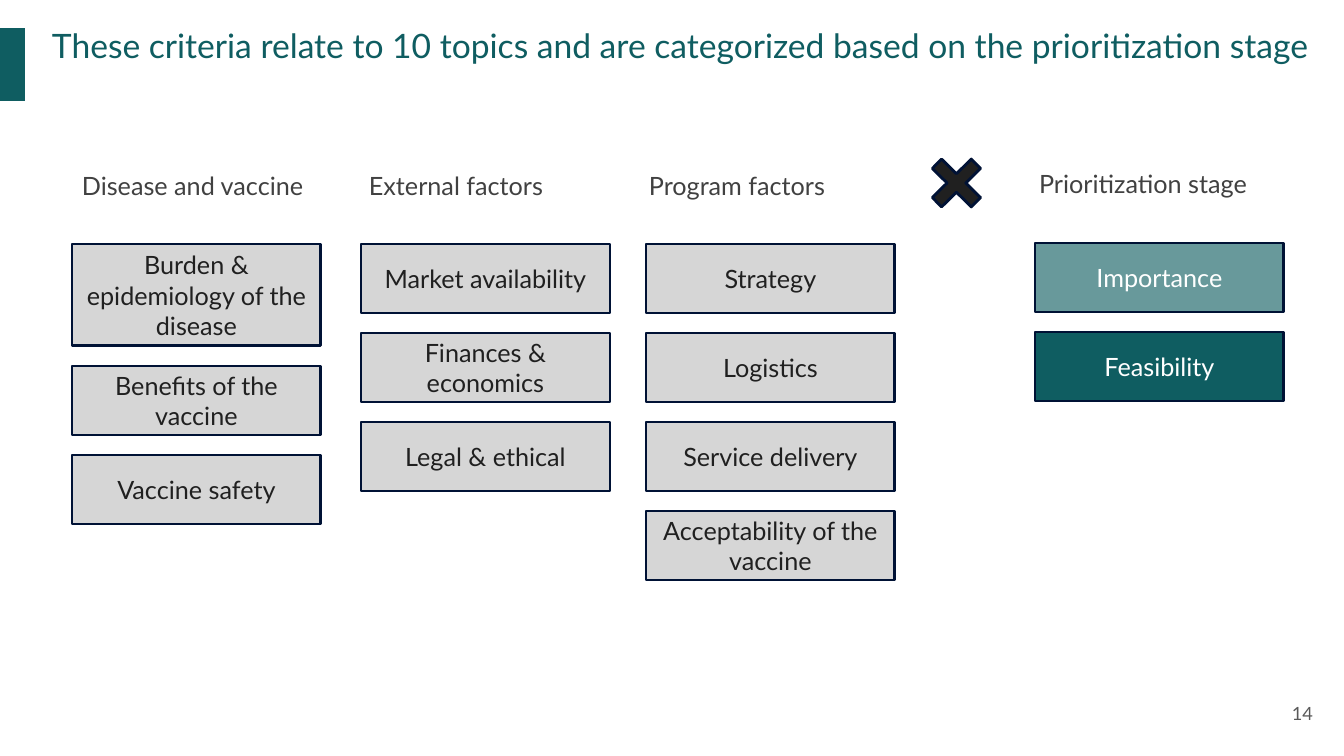
from pptx import Presentation
from pptx.dml.color import RGBColor
from pptx.enum.shapes import MSO_SHAPE
from pptx.enum.text import MSO_ANCHOR, MSO_AUTO_SIZE, PP_ALIGN
from pptx.util import Emu, Pt

FONT = "Lato"
TEAL = RGBColor(0x0F, 0x5D, 0x61)
LIGHT_TEAL = RGBColor(0x68, 0x99, 0x9B)
NAVY = RGBColor(0x00, 0x12, 0x35)
LIGHT_GREY = RGBColor(0xD6, 0xD6, 0xD6)
HEADING_GREY = RGBColor(0x41, 0x41, 0x41)
NUMBER_GREY = RGBColor(0x59, 0x59, 0x59)
INK = RGBColor(0x20, 0x20, 0x20)
WHITE = RGBColor(0xFF, 0xFF, 0xFF)

PIXELS_PER_INCH = 100.8
SLIDE_WIDTH, SLIDE_HEIGHT = 1344, 756
CARD_WIDTH, CARD_HEIGHT, CARD_GAP = 249, 69, 20
TALL_CARD_HEIGHT = 102

# Each topic column: card left, heading left, heading, topics with heights
TOPIC_COLUMNS = [
    (72, 72, "Disease and vaccine", [
        ("Burden & epidemiology of the disease", TALL_CARD_HEIGHT),
        ("Benefits of the vaccine", CARD_HEIGHT),
        ("Vaccine safety", CARD_HEIGHT)]),
    (361, 359, "External factors", [
        ("Market availability", CARD_HEIGHT),
        ("Finances & economics", CARD_HEIGHT),
        ("Legal & ethical", CARD_HEIGHT)]),
    (646, 639, "Program factors", [
        ("Strategy", CARD_HEIGHT),
        ("Logistics", CARD_HEIGHT),
        ("Service delivery", CARD_HEIGHT),
        ("Acceptability of the vaccine", CARD_HEIGHT)]),
]
STAGES = [("Importance", LIGHT_TEAL), ("Feasibility", TEAL)]


def px(length):
    return Emu(round(length * 914400 / PIXELS_PER_INCH))


def place(box):
    return [px(length) for length in box]


def write(shape, text, size, color, align=PP_ALIGN.LEFT, anchor=MSO_ANCHOR.TOP,
          inset=None):
    frame = shape.text_frame
    frame.word_wrap = True
    frame.auto_size = MSO_AUTO_SIZE.NONE
    frame.vertical_anchor = anchor
    if inset is not None:
        frame.margin_left = frame.margin_right = px(inset)
        frame.margin_top = frame.margin_bottom = px(inset)
    paragraph = frame.paragraphs[0]
    paragraph.text = text
    paragraph.alignment = align
    paragraph.font.name = FONT
    paragraph.font.size = Pt(size)
    paragraph.font.color.rgb = color


def add_filled_shape(slide, kind, box, fill, outlined=True):
    shape = slide.shapes.add_shape(kind, *place(box))
    shape.shadow.inherit = False
    shape.fill.solid()
    shape.fill.fore_color.rgb = fill
    if outlined:
        shape.line.color.rgb = NAVY
        shape.line.width = Pt(2)
    else:
        shape.line.fill.background()
    return shape


def add_card(slide, box, text, fill, color):
    card = add_filled_shape(slide, MSO_SHAPE.RECTANGLE, box, fill)
    write(card, text, 18, color, PP_ALIGN.CENTER, MSO_ANCHOR.MIDDLE)


def add_heading(slide, box, text, align=PP_ALIGN.LEFT):
    heading = slide.shapes.add_textbox(*place(box))
    write(heading, text, 18, HEADING_GREY, align)


def add_title(slide, box, text):
    left, top, width, height = box
    add_filled_shape(slide, MSO_SHAPE.RECTANGLE, (left, top + 3, 26, 73), TEAL,
                     outlined=False)
    title = slide.shapes.title
    title.left, title.top, title.width, title.height = place(
        (left + 53, top, width - 53, height))
    write(title, text, 24, TEAL, inset=0)


def add_topic_column(slide, box, heading_left, heading, topics):
    left, top, width = box
    add_heading(slide, (heading_left, top, 263, 49), heading)
    card_top = top + 79
    for text, height in topics:
        add_card(slide, (left, card_top, width, height), text, LIGHT_GREY, INK)
        card_top += height + CARD_GAP


def add_stage_column(slide, box):
    left, top, width = box
    add_heading(slide, (left - 32, top, 280, 40), "Prioritization stage",
                PP_ALIGN.CENTER)
    for row, (text, fill) in enumerate(STAGES):
        card_top = top + 80 + row * (CARD_HEIGHT + CARD_GAP)
        add_card(slide, (left, card_top, width, CARD_HEIGHT), text, fill, WHITE)


def add_slide_number(slide, box, number):
    shape = slide.shapes.add_textbox(*place(box))
    write(shape, number, 13, NUMBER_GREY, PP_ALIGN.RIGHT, MSO_ANCHOR.MIDDLE, 13)


def build_criteria_slide(presentation):
    slide = presentation.slides.add_slide(presentation.slide_layouts[5])
    add_title(slide, (-1, 25, 1318, 81),
              "These criteria relate to 10 topics and are categorized "
              "based on the prioritization stage")

    # Topics by group
    for left, heading_left, heading, topics in TOPIC_COLUMNS:
        add_topic_column(slide, (left, 165, CARD_WIDTH), heading_left, heading, topics)

    # Cross between topics and stages
    cross = add_filled_shape(slide, MSO_SHAPE.MATH_MULTIPLY, (919, 146, 75, 74), INK)
    cross.adjustments[0] = 0.178

    add_stage_column(slide, (1035, 163, CARD_WIDTH))
    add_slide_number(slide, (1245, 685, 81, 57), "14")


def main():
    presentation = Presentation()
    presentation.slide_width = px(SLIDE_WIDTH)
    presentation.slide_height = px(SLIDE_HEIGHT)
    build_criteria_slide(presentation)
    presentation.save("out.pptx")


if __name__ == "__main__":
    main()
